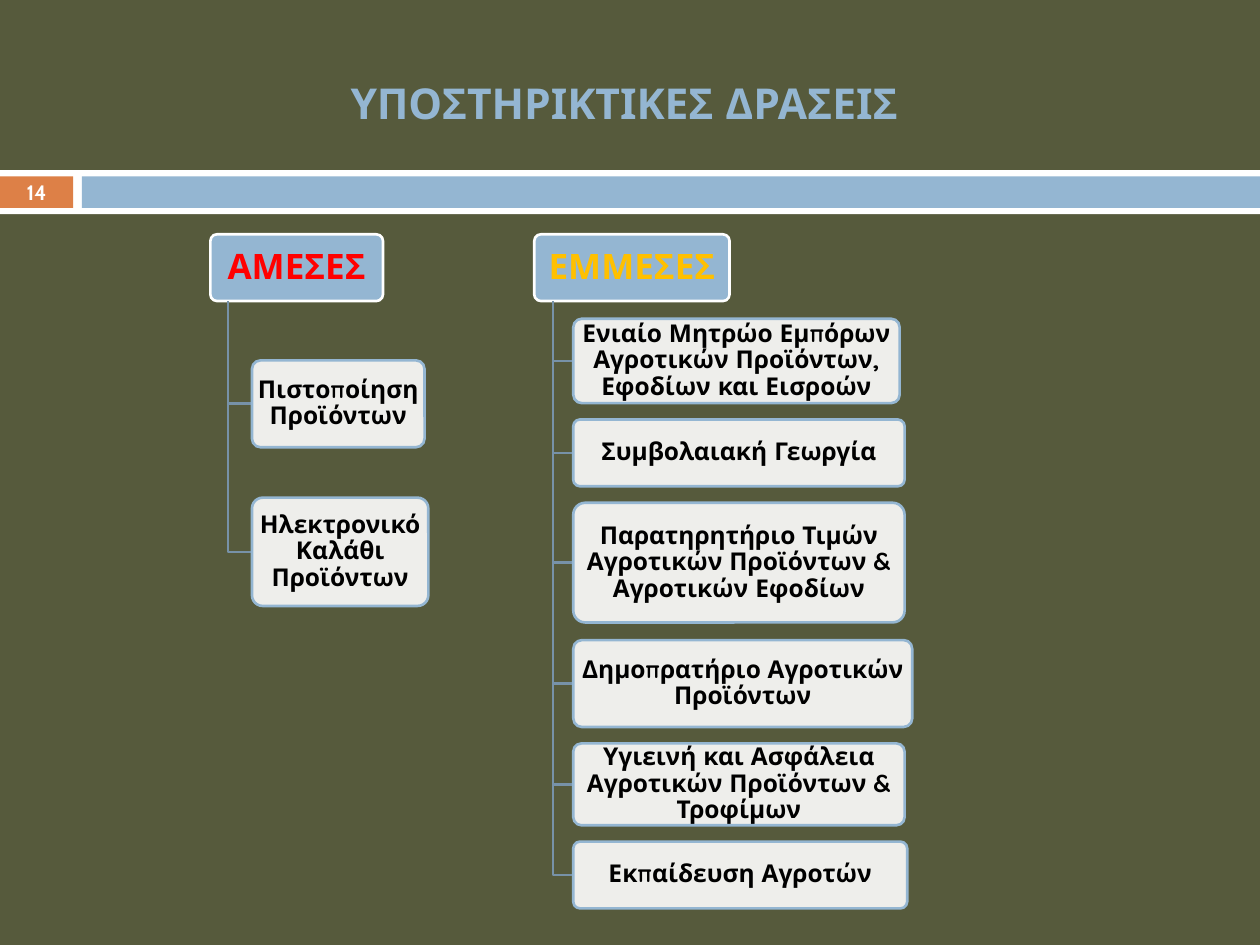
from dataclasses import dataclass

from lxml.etree import SubElement
from pptx import Presentation
from pptx.dml.color import RGBColor
from pptx.enum.shapes import MSO_SHAPE as Shape
from pptx.enum.text import MSO_ANCHOR as Anchor, PP_ALIGN as Align
from pptx.oxml.ns import qn
from pptx.util import Inches, Pt

COLORS = {
    "background": "565A3C",
    "white": "FFFFFF",
    "black": "000000",
    "orange": "DD8047",
    "blue": "94B6D2",
    "link": "7792A8",
    "red": "FF0000",
    "gold": "FFC000",
}
HEAD_TOP, HEAD_HEIGHT = 1.86, 0.53
LINE_WIDTH = Pt(1.5)


@dataclass
class Action:
    text: str
    top: float
    width: float
    height: float


@dataclass
class Branch:
    title: str
    color: str
    left: float
    width: float
    trunk: float
    action_left: float
    actions: list[Action]


BRANCHES = [
    Branch("ΑΜΕΣΕΣ", "red", 1.67, 1.37, 1.81, 2.0, [
        Action("Πιστοποίηση Προϊόντων", 2.86, 1.37, 0.69),
        Action("Ηλεκτρονικό Καλάθι Προϊόντων", 3.95, 1.4, 0.86),
    ]),
    Branch("ΕΜΜΕΣΕΣ", "gold", 4.24, 1.55, 4.39, 4.55, [
        Action("Ενιαίο Μητρώο Εμπόρων Αγροτικών Προϊόντων, "
               "Εφοδίων και Εισροών", 2.53, 2.59, 0.67),
        Action("Συμβολαιακή Γεωργία", 3.33, 2.63, 0.53),
        Action("Παρατηρητήριο Τιμών Αγροτικών Προϊόντων & "
               "Αγροτικών Εφοδίων", 3.99, 2.63, 0.95),
        Action("Δημοπρατήριο Αγροτικών Προϊόντων", 5.08, 2.69, 0.69),
        Action("Υγιεινή και Ασφάλεια Αγροτικών Προϊόντων & "
               "Τροφίμων", 5.9, 2.63, 0.65),
        Action("Εκπαίδευση Αγροτών", 6.68, 2.65, 0.53),
    ]),
]


def rgb(name: str) -> RGBColor:
    return RGBColor.from_string(COLORS[name])


def write(shape, text: str, size: float, color: str, font: str = "Quicksand",
          inset: float = 0.0):
    """Put one bold, centred paragraph into a shape."""
    frame = shape.text_frame
    frame.word_wrap = True
    frame.vertical_anchor = Anchor.MIDDLE
    frame.margin_left = frame.margin_right = Inches(inset)
    frame.margin_top = frame.margin_bottom = Inches(inset)
    para = frame.paragraphs[0]
    para.text = text
    para.alignment = Align.CENTER
    para.font.name = font
    para.font.size = Pt(size)
    para.font.bold = True
    para.font.color.rgb = rgb(color)
    return para


def add_bar(slide, left: float, top: float, width: float, height: float,
            color: str):
    bar = slide.shapes.add_shape(Shape.RECTANGLE, Inches(left), Inches(top),
                                 Inches(width), Inches(height))
    bar.shadow.inherit = False
    bar.fill.solid()
    bar.fill.fore_color.rgb = rgb(color)
    bar.line.fill.background()
    return bar


def add_box(slide, left: float, top: float, width: float, height: float,
            fill: str, line: str):
    box = slide.shapes.add_shape(Shape.ROUNDED_RECTANGLE, Inches(left),
                                 Inches(top), Inches(width), Inches(height))
    box.adjustments[0] = 0.1
    box.shadow.inherit = False
    box.fill.solid()
    box.fill.fore_color.rgb = rgb(fill)
    box.line.color.rgb = rgb(line)
    box.line.width = LINE_WIDTH
    return box


def set_opacity(shape, percent: int) -> None:
    color = shape.fill._xPr.find(qn("a:solidFill"))[0]
    SubElement(color, qn("a:alpha"), val=str(percent * 1000))


def add_link(slide, trunk: float, right: float, bottom: float) -> None:
    """Draw the elbow from the branch head to one action."""
    start = HEAD_TOP + HEAD_HEIGHT
    builder = slide.shapes.build_freeform(Inches(trunk), Inches(start))
    builder.add_line_segments([(Inches(trunk), Inches(bottom)),
                               (Inches(right), Inches(bottom))], close=False)
    link = builder.convert_to_shape()
    link.shadow.inherit = False
    link.fill.background()
    link.line.color.rgb = rgb("link")
    link.line.width = LINE_WIDTH


def add_branch(slide, branch: Branch) -> None:
    head = add_box(slide, branch.left, HEAD_TOP, branch.width, HEAD_HEIGHT,
                   "blue", "white")
    write(head, branch.title, 20, branch.color, inset=0.02).line_spacing = 0.9
    for action in branch.actions:
        add_link(slide, branch.trunk, branch.action_left,
                 action.top + action.height / 2)
        box = add_box(slide, branch.action_left, action.top, action.width,
                      action.height, "white", "blue")
        set_opacity(box, 90)
        write(box, action.text, 14, "black", inset=0.01).line_spacing = 0.9


def main() -> None:
    deck = Presentation()
    deck.slide_width, deck.slide_height = Inches(10), Inches(7.5)
    slide = deck.slides.add_slide(deck.slide_layouts[6])
    slide.background.fill.solid()
    slide.background.fill.fore_color.rgb = rgb("background")

    # Divider band with the page number
    add_bar(slide, 0, 1.35, 10, 0.35, "white")
    number = add_bar(slide, 0, 1.4, 0.58, 0.25, "orange")
    write(number, "14", 11.9, "white", font="Cabin")
    add_bar(slide, 0.65, 1.4, 9.35, 0.25, "blue")

    # Title
    title = slide.shapes.add_textbox(Inches(0.35), Inches(0.31),
                                     Inches(9.21), Inches(1))
    write(title, "ΥΠΟΣΤΗΡΙΚΤΙΚΕΣ ΔΡΑΣΕΙΣ", 24.3, "blue")

    # Two hierarchies of actions
    for branch in BRANCHES:
        add_branch(slide, branch)

    deck.save("out.pptx")


if __name__ == "__main__":
    main()
